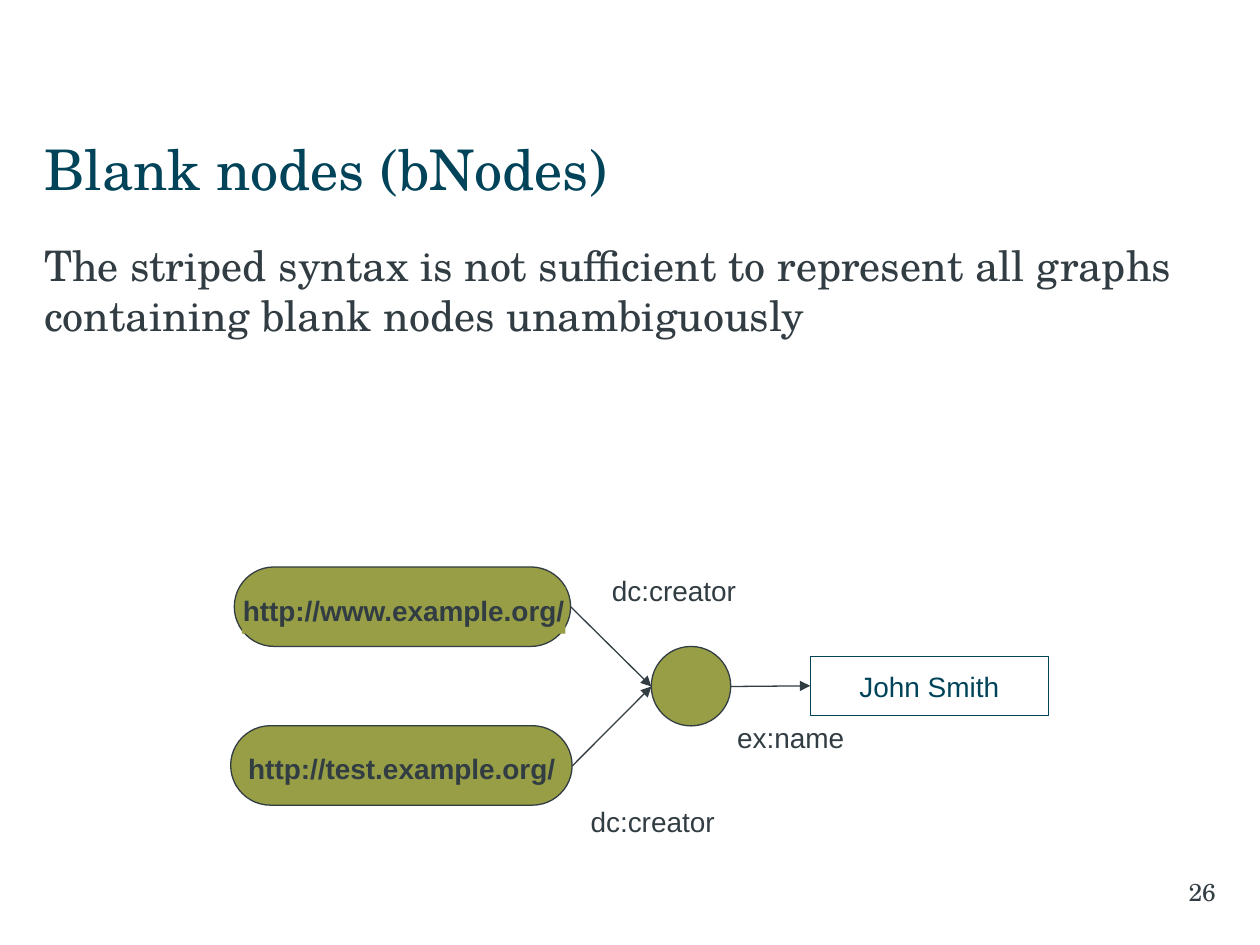
from lxml import etree
from pptx import Presentation
from pptx.dml.color import RGBColor
from pptx.enum.shapes import MSO_CONNECTOR, MSO_SHAPE
from pptx.enum.text import MSO_ANCHOR, PP_ALIGN
from pptx.oxml.ns import qn
from pptx.util import Pt

LEFT, MID, RIGHT = PP_ALIGN.LEFT, PP_ALIGN.CENTER, PP_ALIGN.RIGHT
TOP, MIDDLE = MSO_ANCHOR.TOP, MSO_ANCHOR.MIDDLE
RECT, PILL, OVAL = MSO_SHAPE.RECTANGLE, MSO_SHAPE.ROUNDED_RECTANGLE, MSO_SHAPE.OVAL
LINE = MSO_CONNECTOR.STRAIGHT
SERIF, SANS = "TeX Gyre Schola", "Arial"
HEX = {"ink": "323D43", "teal": "014359", "olive": "979E45", "white": "FFFFFF"}
RGB = {name: RGBColor.from_string(code) for name, code in HEX.items()}


def write(shape, text, size, font=SANS, color="ink", align=LEFT, anchor=TOP,
          wrap=True, bold=False, pad=(7.2, 7.2), after=0):
    frame = shape.text_frame
    frame.text = text
    form = {"word_wrap": wrap, "vertical_anchor": anchor,
            "margin_left": Pt(pad[0]), "margin_right": Pt(pad[1]),
            "margin_top": Pt(3.6), "margin_bottom": Pt(3.6)}
    for key, value in form.items():
        setattr(frame, key, value)
    para = frame.paragraphs[0]
    para.alignment = align
    para.space_before, para.space_after = Pt(0), Pt(after)
    face = para.runs[0].font
    for key, value in {"name": font, "size": Pt(size), "bold": bold}.items():
        setattr(face, key, value)
    face.color.rgb = RGB[color]


def draw(kind, box, fill, edge=None):
    shape = slide.shapes.add_shape(kind, *map(Pt, box))
    shape.shadow.inherit = False
    shape.fill.solid()
    shape.fill.fore_color.rgb = RGB[fill]
    if edge:
        shape.line.color.rgb = RGB[edge]
        shape.line.width = Pt(0.75)
    else:
        shape.line.fill.background()
    return shape


deck = Presentation()
deck.slide_width, deck.slide_height = Pt(720), Pt(540)
slide = deck.slides.add_slide(deck.slide_layouts[1])

# Title and body
title, body = slide.placeholders
for holder, top, high in [(title, 70.6, 51.1), (body, 133.2, 352)]:
    holder.left, holder.top = Pt(25.2), Pt(top)
    holder.width, holder.height = Pt(669), Pt(high)
write(title, "Blank nodes (bNodes)", 32, SERIF, "teal", anchor=MIDDLE, pad=(0, 7.2))
write(body, "The striped syntax is not sufficient to represent all graphs "
      "containing blank nodes unambiguously", 24, SERIF, pad=(0, 7.2), after=18)
props = body.text_frame.paragraphs[0]._p.get_or_add_pPr()
props.set("marL", "0")
props.set("indent", "0")
etree.SubElement(props, qn("a:buNone"))

# Resource nodes, each with a label plate
nodes = [("http://www.example.org/", 324, (133.9, 192.2), (138.2, 185)),
         ("http://test.example.org/", 414.7, (131.8, 195.1), (141.8, 175.7))]
for text, top, (left, wide), (start, span) in nodes:
    pill = draw(PILL, (left, top, wide, 45.4), "olive", "ink")
    pill.adjustments[0] = 0.5
    plate = draw(RECT, (start, top + 11.5, span, 26.6), "olive")
    write(plate, text, 16, align=MID, wrap=False, bold=True, pad=(0, 0))

# Blank node and literal
draw(OVAL, (372.2, 369.4, 45.4, 45.4), "olive", "ink")
name = draw(RECT, (463, 375.1, 136.1, 33.8), "white", "teal")
write(name, "John Smith", 16, color="teal", align=MID, anchor=MIDDLE, wrap=False)

# Arrows
for ends in [(326.2, 346.8, 372.2, 392.3), (326.9, 437.8, 372.2, 392.3),
             (417.6, 392.3, 463, 391.9)]:
    arrow = slide.shapes.add_connector(LINE, *map(Pt, ends))
    arrow.line.color.rgb = RGB["ink"]
    arrow.line.width = Pt(0.75)
    etree.SubElement(arrow.line._get_or_add_ln(), qn("a:tailEnd"), type="triangle")
    etree.SubElement(arrow._element.spPr, qn("a:effectLst"))

# Arrow labels
for text, left, top, wide, align in [("dc:creator", 342, 324, 85.7, RIGHT),
                                     ("dc:creator", 329.8, 455.8, 85.7, RIGHT),
                                     ("ex:name", 414, 408.2, 75.6, MID)]:
    label = slide.shapes.add_textbox(Pt(left), Pt(top), Pt(wide), Pt(26.6))
    write(label, text, 16, align=align, anchor=MIDDLE, wrap=False)

# Page number
page = slide.shapes.add_textbox(Pt(556.6), Pt(497.5), Pt(138.2), Pt(24.5))
write(page, "26", 14, SERIF, align=RIGHT, pad=(7.2, 0))

deck.save("out.pptx")
